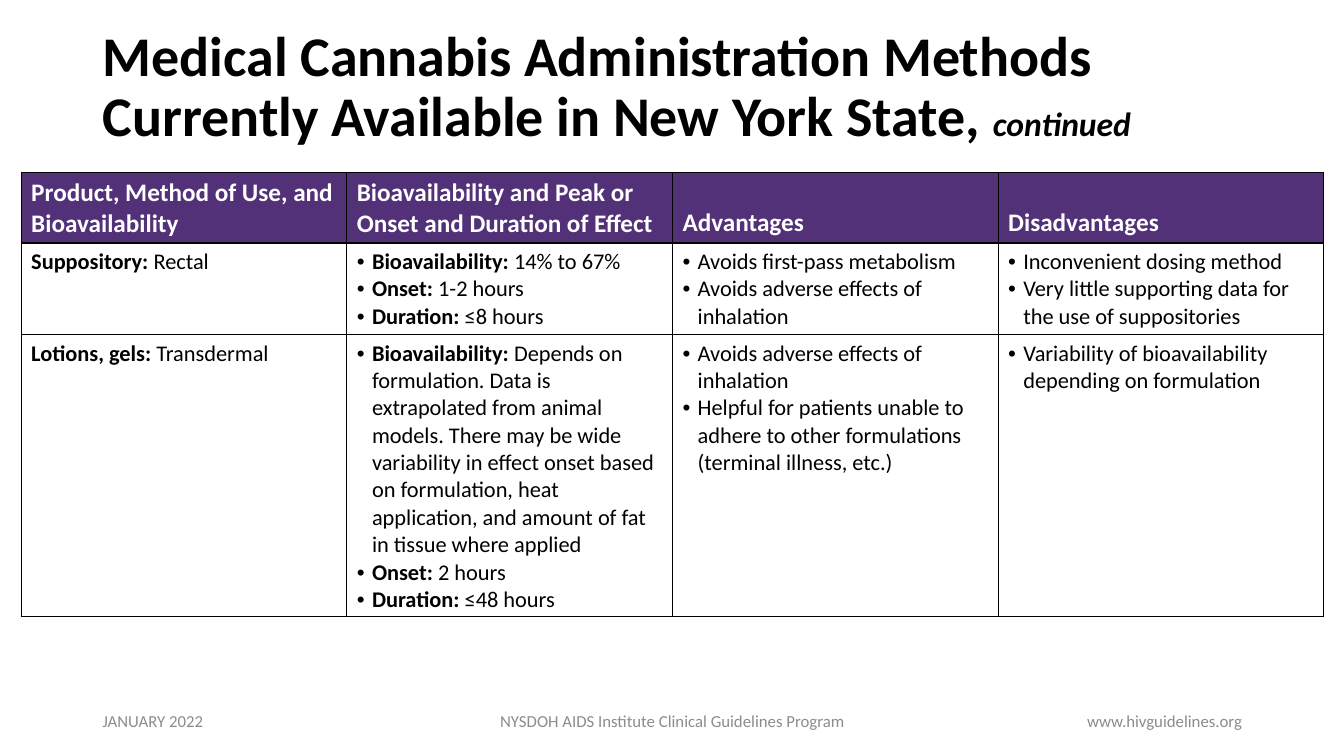
"""Build the slide on medical cannabis administration methods."""
from dataclasses import dataclass

from lxml.etree import SubElement
from pptx import Presentation
from pptx.dml.color import RGBColor
from pptx.enum.text import MSO_ANCHOR as Anchor, PP_ALIGN as Align
from pptx.oxml.ns import qn
from pptx.util import Inches, Pt


@dataclass(frozen=True)
class Theme:
    """Colours, font and type sizes."""
    font: str = "Calibri"
    black: str = "000000"
    white: str = "FFFFFF"
    purple: str = "523178"
    grey: str = "8C8C8C"
    title: int = 40
    title_note: int = 24
    header: int = 18
    body: int = 16
    footer: int = 12


@dataclass(frozen=True)
class Item:
    """A paragraph with an optional bold label before its text."""
    text: str
    label: str = ""
    bullet: bool = True


@dataclass(frozen=True)
class Footer:
    """A text in the footer band."""
    text: str
    left: float
    width: float
    align: Align


THEME = Theme()
INDENT = 0.15
COL_WIDTH = 3.23
ROW_HEIGHTS = (0.7, 0.91, 2.8)
HEADERS = (
    "Product, Method of Use, and Bioavailability",
    "Bioavailability and Peak or Onset and Duration of Effect",
    "Advantages",
    "Disadvantages",
)
METHODS = (
    (
        (Item("Rectal", "Suppository: ", bullet=False),),
        (Item("14% to 67%", "Bioavailability: "),
         Item("1-2 hours", "Onset: "),
         Item("≤8 hours", "Duration: ")),
        (Item("Avoids first-pass metabolism"),
         Item("Avoids adverse effects of inhalation")),
        (Item("Inconvenient dosing method"),
         Item("Very little supporting data for the use of suppositories")),
    ),
    (
        (Item("Transdermal", "Lotions, gels: ", bullet=False),),
        (Item("Depends on formulation. Data is extrapolated from animal models. "
              "There may be wide variability in effect onset based on formulation, "
              "heat application, and amount of fat in tissue where applied",
              "Bioavailability: "),
         Item("2 hours", "Onset: "),
         Item("≤48 hours", "Duration: ")),
        (Item("Avoids adverse effects of inhalation"),
         Item("Helpful for patients unable to adhere to other formulations "
              "(terminal illness, etc.)")),
        (Item("Variability of bioavailability depending on formulation"),),
    ),
)
FOOTERS = (
    Footer("JANUARY 2022", 0.92, 3, Align.LEFT),
    Footer("NYSDOH AIDS Institute Clinical Guidelines Program", 4.42, 4.5, Align.CENTER),
    Footer("www.hivguidelines.org", 9.42, 3, Align.RIGHT),
)


def add_text(p, text: str, *, size: int, color: str = THEME.black,
             bold: bool = False, italic: bool = False) -> None:
    """Add a formatted run to a paragraph."""
    r = p.add_run()
    r.text = text
    r.font.name = THEME.font
    r.font.size = Pt(size)
    r.font.bold = bold
    r.font.italic = italic
    r.font.color.rgb = RGBColor.from_string(color)


def add_box(s, left: float, top: float, width: float, height: float):
    """Add a wrapping, vertically centred text box and return its paragraph."""
    sp = s.shapes.add_textbox(Inches(left), Inches(top), Inches(width), Inches(height))
    tf = sp.text_frame
    tf.word_wrap = True
    tf.vertical_anchor = Anchor.MIDDLE
    return tf.paragraphs[0]


def set_bullet(p) -> None:
    """Give a paragraph a bullet with a hanging indent."""
    pPr = p._p.get_or_add_pPr()
    pPr.set("marL", str(Inches(INDENT)))
    pPr.set("indent", str(-Inches(INDENT)))
    SubElement(pPr, qn("a:buFont"), typeface="Arial")
    SubElement(pPr, qn("a:buChar"), char="•")


def style_cell(cell, fill: str) -> None:
    """Draw black borders around a cell and fill it."""
    tcPr = cell._tc.get_or_add_tcPr()
    for side in ("lnL", "lnR", "lnT", "lnB"):
        ln = SubElement(tcPr, qn(f"a:{side}"), w=str(Pt(1)))
        SubElement(SubElement(ln, qn("a:solidFill")), qn("a:srgbClr"), val=THEME.black)
    cell.fill.solid()
    cell.fill.fore_color.rgb = RGBColor.from_string(fill)


def fill_items(cell, items: tuple[Item, ...]) -> None:
    """Write the items of a body cell, one paragraph each."""
    tf = cell.text_frame
    for i, item in enumerate(items):
        p = tf.add_paragraph() if i else tf.paragraphs[0]
        if item.bullet:
            set_bullet(p)
        if item.label:
            add_text(p, item.label, size=THEME.body, bold=True)
        add_text(p, item.text, size=THEME.body)


def add_methods_table(s) -> None:
    """Add the table of administration methods."""
    table = s.shapes.add_table(
        len(ROW_HEIGHTS), len(HEADERS), Inches(0.21), Inches(1.71),
        Inches(COL_WIDTH * len(HEADERS)), Inches(sum(ROW_HEIGHTS))).table
    table.horz_banding = False
    for row, height in zip(table.rows, ROW_HEIGHTS):
        row.height = Inches(height)
    for c, header in enumerate(HEADERS):
        table.columns[c].width = Inches(COL_WIDTH)
        cell = table.cell(0, c)
        style_cell(cell, THEME.purple)
        cell.vertical_anchor = Anchor.BOTTOM
        add_text(cell.text_frame.paragraphs[0], header,
                 size=THEME.header, color=THEME.white, bold=True)
        for r, method in enumerate(METHODS, start=1):
            style_cell(table.cell(r, c), THEME.white)
            fill_items(table.cell(r, c), method[c])


def main() -> None:
    """Build and save the presentation."""
    prs = Presentation()
    prs.slide_width, prs.slide_height = Inches(13.33), Inches(7.5)
    s = prs.slides.add_slide(prs.slide_layouts[6])
    p = add_box(s, 0.92, 0.15, 10.63, 1.45)
    p.line_spacing = 0.9
    add_text(p, "Medical Cannabis Administration Methods Currently Available "
             "in New York State, ", size=THEME.title, bold=True)
    add_text(p, "continued", size=THEME.title_note, bold=True, italic=True)
    add_methods_table(s)
    for footer in FOOTERS:
        p = add_box(s, footer.left, 6.95, footer.width, 0.4)
        p.alignment = footer.align
        add_text(p, footer.text, size=THEME.footer, color=THEME.grey)
    prs.save("out.pptx")


if __name__ == "__main__":
    main()
